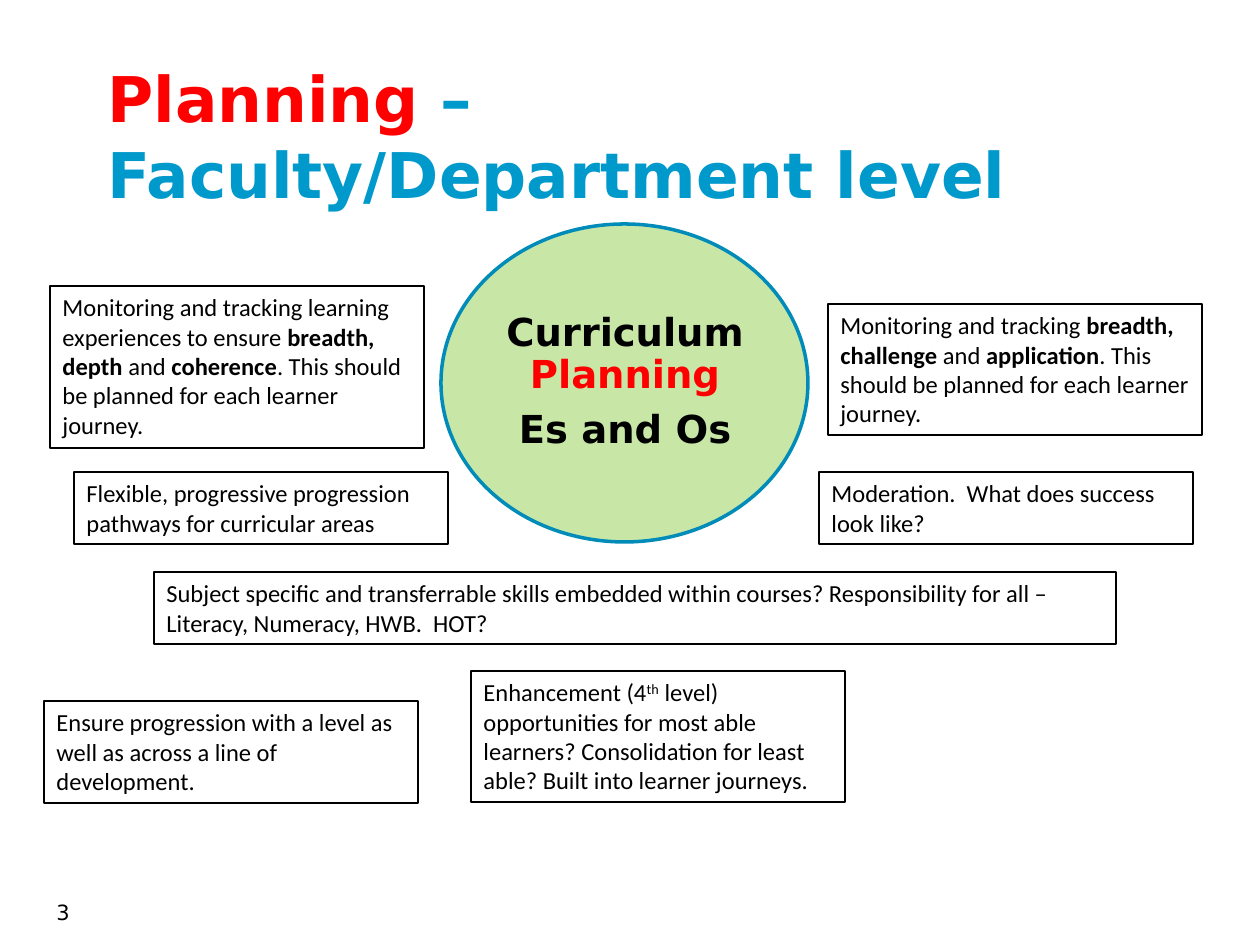
from lxml.etree import SubElement
from pptx import Presentation
from pptx.dml.color import RGBColor
from pptx.enum.shapes import MSO_SHAPE
from pptx.enum.text import MSO_ANCHOR, MSO_AUTO_SIZE, PP_ALIGN
from pptx.oxml.ns import qn
from pptx.util import Emu, Pt

BLACK = RGBColor(0x00, 0x00, 0x00)
RED = RGBColor(0xFF, 0x00, 0x00)
BLUE = RGBColor(0x00, 0x99, 0xCC)
OVAL_LINE = RGBColor(0x00, 0x8B, 0xB9)
OVAL_FILL = RGBColor(0x92, 0xD0, 0x50)
HEADING_FONT, BODY_FONT = "DejaVu Sans", "Calibri"
PX_PER_INCH = 126
BOX_WIDTH = 374

# Content: a run is (text, style), style being a colour, "bold", "super" or None
TITLE = [("Planning", RED), (" – Faculty/Department level", BLUE)]
HUB = [
    [("Curriculum ", BLACK), ("Planning", RED)],
    [("Es and Os", BLACK)],
]
PAGE_NUMBER = "3"
JOURNEY = ". This should be planned for each learner journey."

# Note boxes: left, top, width, height, runs
NOTES = [
    (50, 286, BOX_WIDTH, 162, [
        ("Monitoring and tracking learning experiences to ensure ", None),
        ("breadth, depth ", "bold"), ("and ", None), ("coherence", "bold"),
        (JOURNEY, None)]),
    (828, 304, BOX_WIDTH, 131, [
        ("Monitoring and tracking ", None), ("breadth, challenge ", "bold"),
        ("and ", None), ("application", "bold"), (JOURNEY, None)]),
    (154, 572, 962, 72, [
        ("Subject specific and transferrable skills embedded within courses? "
         "Responsibility for all – Literacy, Numeracy, HWB.  HOT?", None)]),
    (44, 701, BOX_WIDTH, 102, [
        ("Ensure progression with a level as well as across a line of "
         "development.", None)]),
    (74, 472, BOX_WIDTH, 72, [
        ("Flexible, progressive progression pathways for curricular areas", None)]),
    (471, 671, BOX_WIDTH, 131, [
        ("Enhancement (4", None), ("th", "super"),
        (" level) opportunities for most able learners? Consolidation for "
         "least able? Built into learner journeys.", None)]),
    (819, 472, BOX_WIDTH, 72, [
        ("Moderation.  What does success look like?", None)]),
]


def px(*values):
    return [Emu(round(value * 914400 / PX_PER_INCH)) for value in values]


def add_run(paragraph, text, font_name, size, color=BLACK, bold=False):
    run = paragraph.add_run()
    run.text = text
    run.font.name = font_name
    run.font.size = Pt(size)
    run.font.bold = bold
    run.font.color.rgb = color
    return run


def add_text_box(shapes, box, anchor):
    frame = shapes.add_textbox(*px(*box)).text_frame
    frame.word_wrap = True
    frame.vertical_anchor = anchor
    return frame


def add_outlined(shapes, kind, box, line_color, line_width):
    shape = shapes.add_shape(kind, *px(*box))
    shape.shadow.inherit = False
    shape.fill.background()
    shape.line.color.rgb = line_color
    shape.line.width = Pt(line_width)
    return shape


presentation = Presentation()
presentation.slide_width, presentation.slide_height = px(1260, 945)
slide = presentation.slides.add_slide(presentation.slide_layouts[6])

# Page number
paragraph = add_text_box(slide.shapes, (0, 893, 82, 52), MSO_ANCHOR.TOP).paragraphs[0]
paragraph.alignment = PP_ALIGN.RIGHT
add_run(paragraph, PAGE_NUMBER, HEADING_FONT, 12)

# Title
title_frame = add_text_box(slide.shapes, (95, 66, 1071, 139), MSO_ANCHOR.MIDDLE)
for text, color in TITLE:
    add_run(title_frame.paragraphs[0], text, HEADING_FONT, 36, color, bold=True)

# Central oval with its text
hub = slide.shapes.add_group_shape()
oval = add_outlined(hub.shapes, MSO_SHAPE.OVAL, (441, 224, 367, 318), OVAL_LINE, 2)
oval.fill.solid()
oval.fill.fore_color.rgb = OVAL_FILL
fill_color = oval.fill._xPr.find(qn("a:solidFill"))[0]
SubElement(fill_color, qn("a:alpha"), val="50000")

hub_frame = add_text_box(hub.shapes, (495, 271, 260, 224), MSO_ANCHOR.MIDDLE)
hub_frame.margin_left, hub_frame.margin_top = px(4, 4)
hub_frame.margin_right, hub_frame.margin_bottom = px(4, 4)
for index, runs in enumerate(HUB):
    paragraph = hub_frame.add_paragraph() if index else hub_frame.paragraphs[0]
    paragraph.alignment = PP_ALIGN.CENTER
    paragraph.line_spacing = 0.9
    paragraph.space_after = Pt(8)
    for text, color in runs:
        add_run(paragraph, text, HEADING_FONT, 22, color, bold=True)

# Note boxes around the oval
for *box, runs in NOTES:
    note = add_outlined(slide.shapes, MSO_SHAPE.RECTANGLE, box, BLACK, 1)
    frame = note.text_frame
    frame.word_wrap = True
    frame.auto_size = MSO_AUTO_SIZE.SHAPE_TO_FIT_TEXT
    frame.vertical_anchor = MSO_ANCHOR.TOP
    paragraph = frame.paragraphs[0]
    paragraph.alignment = PP_ALIGN.LEFT
    for text, style in runs:
        run = add_run(paragraph, text, BODY_FONT, 14, bold=style == "bold")
        if style == "super":
            run.font._element.set("baseline", "30000")

presentation.save("out.pptx")
